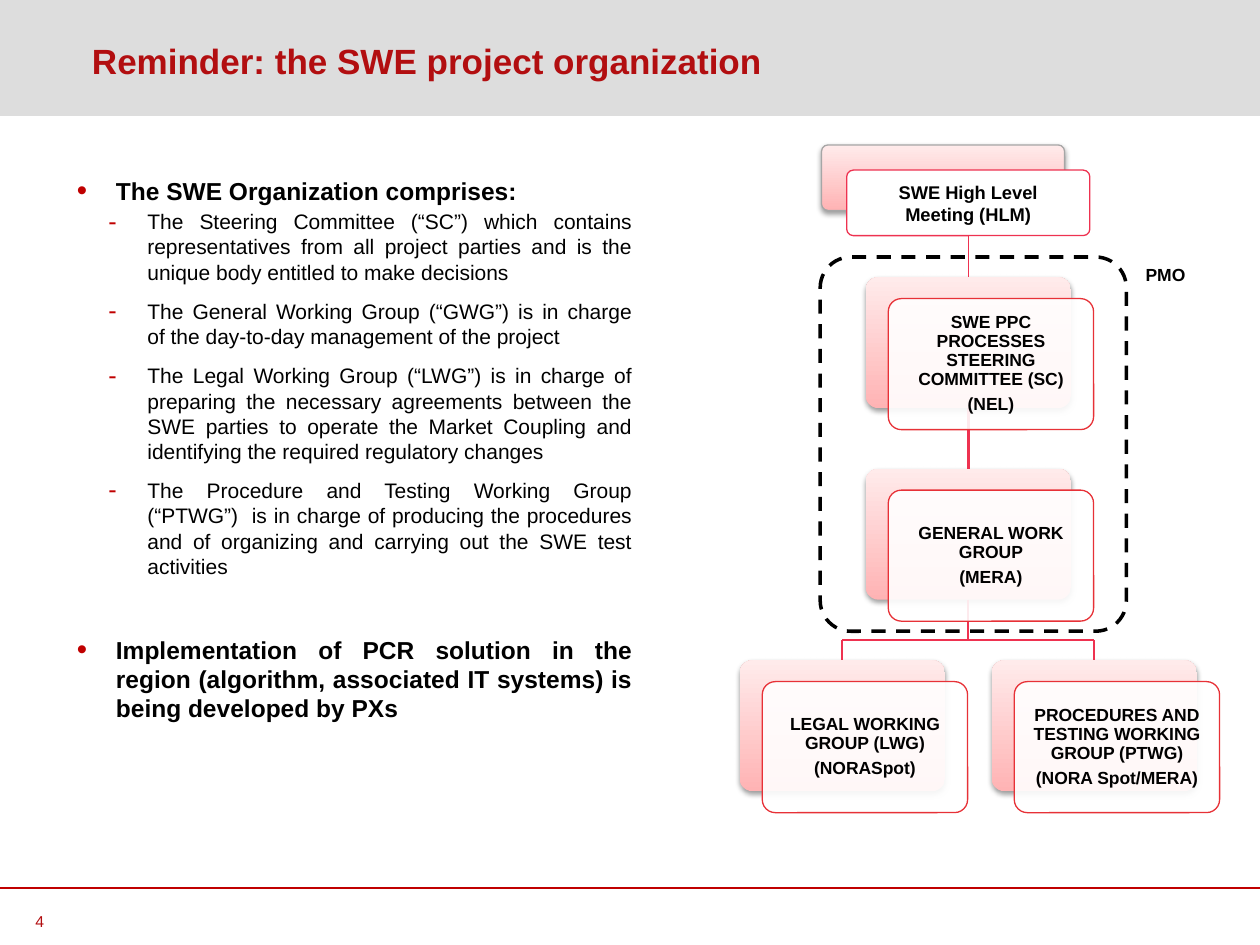
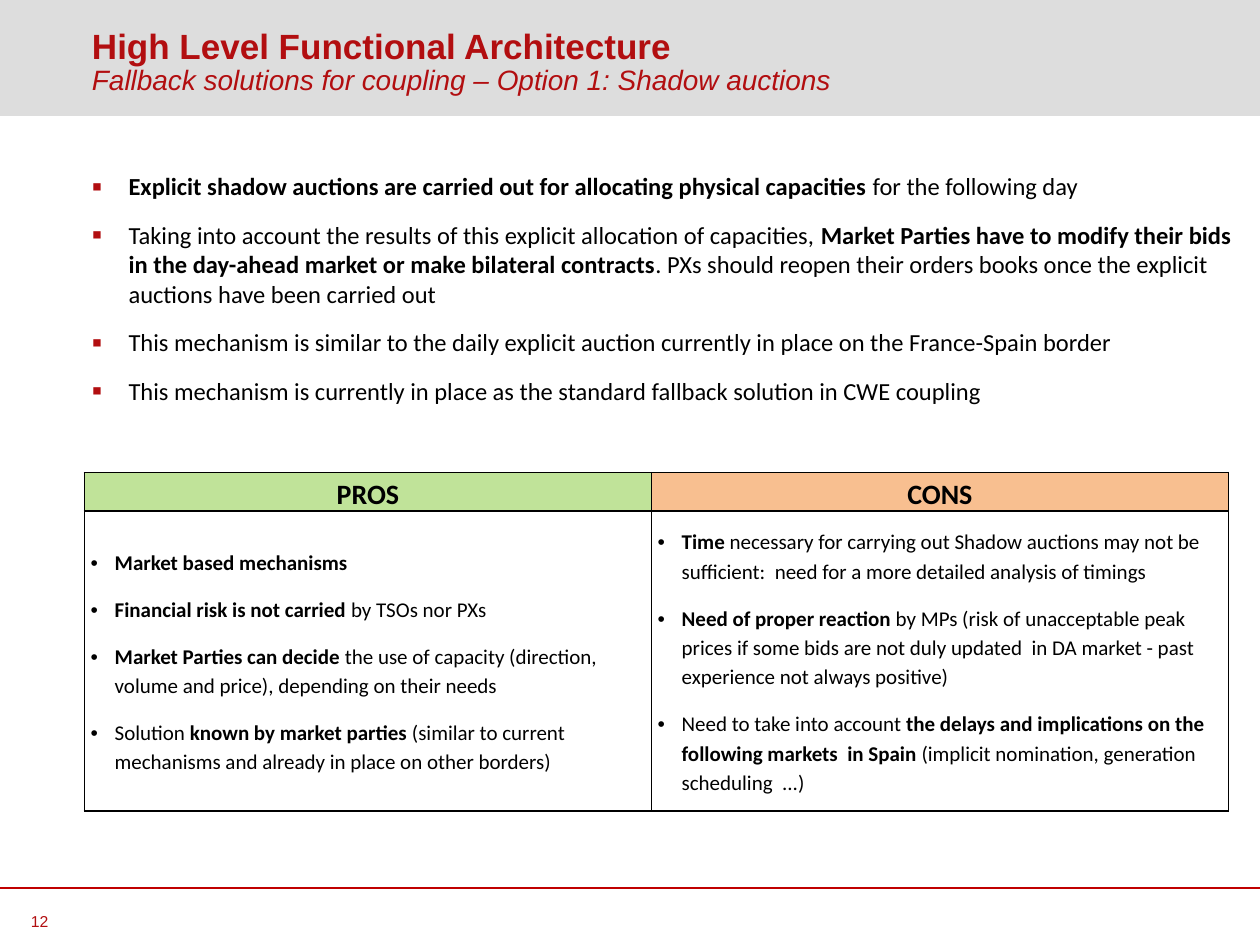
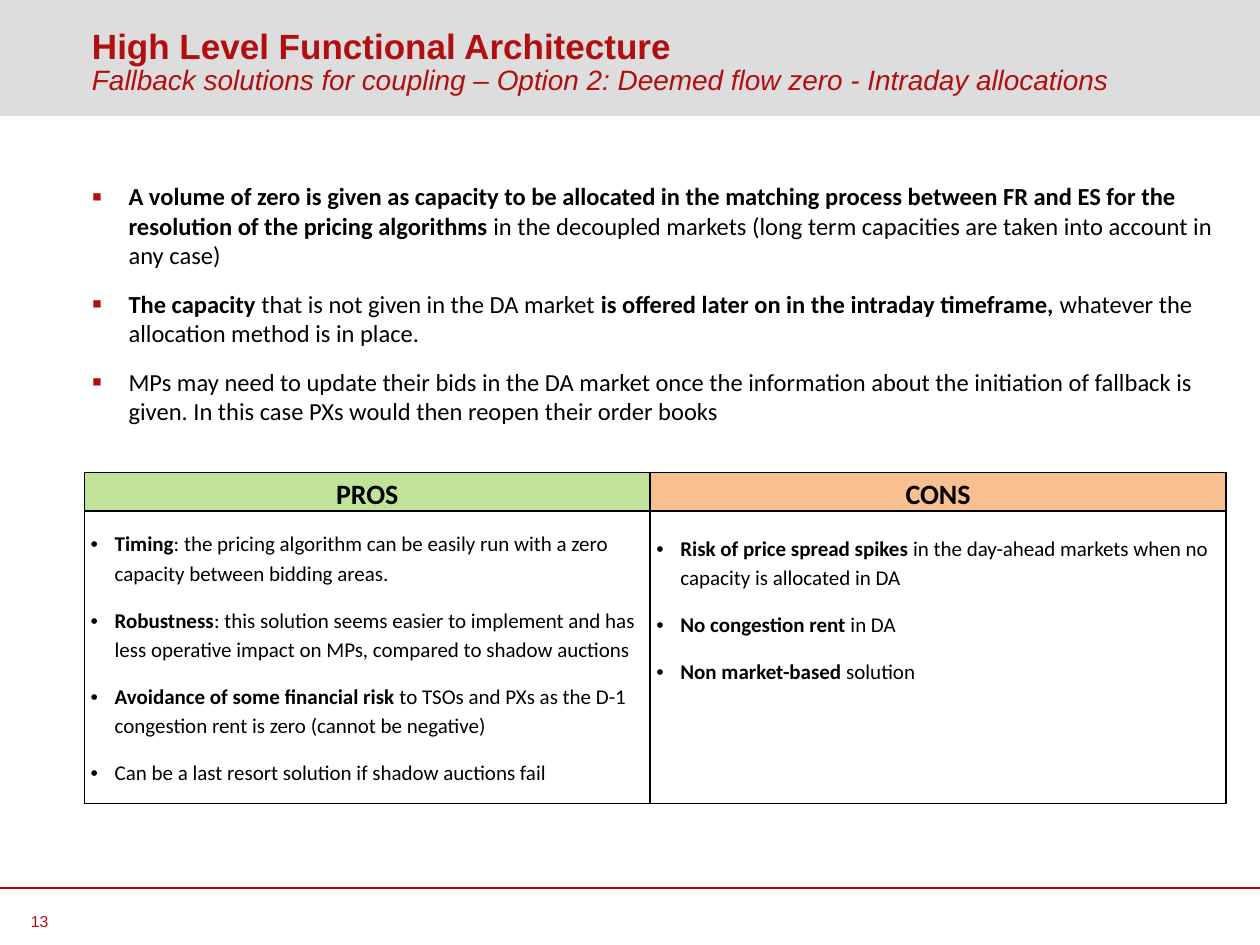
from lxml.etree import SubElement
from pptx import Presentation
from pptx.dml.color import RGBColor
from pptx.enum.dml import MSO_LINE
from pptx.enum.shapes import MSO_CONNECTOR, MSO_SHAPE
from pptx.enum.text import MSO_ANCHOR, MSO_AUTO_SIZE, PP_ALIGN
from pptx.oxml.ns import qn
from pptx.util import Inches, Pt

COLORS = {
    "text": "000000", "white": "FFFFFF", "band": "DDDDDD", "title": "B20E10",
    "rule": "C00000", "link": "EE3250", "card": "E73137", "grey": "A6A6A6",
    "pink": "FFB3B4", "blush": "FFEBEB", "pros": "C0E399", "cons": "F8BF90",
}
RGB = {name: RGBColor.from_string(value) for name, value in COLORS.items()}


def write(frame, text, size=12, font="Arial", color="text", bold=False, italic=False,
          align=PP_ALIGN.LEFT, spacing=None, before=0, after=0,
          bullet=None, bullet_color=None, margin=0, hang=0):
    """Add one paragraph to the frame; **marks** switch to bold."""
    para = frame.add_paragraph() if frame.text else frame.paragraphs[0]
    para.alignment = align
    para.line_spacing = spacing
    para.space_before = Pt(before if para is not frame.paragraphs[0] and frame.text else 0)
    para.space_after = Pt(after)
    if bullet:
        props = para._p.get_or_add_pPr()
        props.set("marL", str(Inches(margin)))
        props.set("indent", str(-Inches(hang)))
        if bullet_color:
            SubElement(SubElement(props, qn("a:buClr")), qn("a:srgbClr"),
                       val=COLORS[bullet_color])
            SubElement(props, qn("a:buSzPct"), val="120000")
        SubElement(props, qn("a:buFont"), typeface="Arial")
        SubElement(props, qn("a:buChar"), char=bullet)
    for index, part in enumerate(text.split("**")):
        if part:
            span = para.add_run()
            span.text = part
            span.font.name, span.font.size = font, Pt(size)
            span.font.bold, span.font.italic = bold or index % 2 == 1, italic
            span.font.color.rgb = RGB[color]


def place(page, left, top, width, height, shape=None, line=None, weight=0.75,
          inset_x=0, inset_y=0, anchor=MSO_ANCHOR.TOP):
    """Add a preset shape, or a text box if no shape is named."""
    area = [Inches(length) for length in (left, top, width, height)]
    if shape is None:
        box = page.shapes.add_textbox(*area)
    else:
        box = page.shapes.add_shape(shape, *area)
        box.shadow.inherit = False
        box.fill.background()
        if shape == MSO_SHAPE.ROUNDED_RECTANGLE:
            box.adjustments[0] = 0.1
        if line:
            box.line.color.rgb = RGB[line]
            box.line.width = Pt(weight)
        else:
            box.line.fill.background()
    frame = box.text_frame
    frame.word_wrap = True
    frame.vertical_anchor = anchor
    frame.margin_left = frame.margin_right = Inches(inset_x)
    frame.margin_top = frame.margin_bottom = Inches(inset_y)
    return box


deck = Presentation()
deck.slide_width, deck.slide_height = Inches(10), Inches(7.5)

# Title, band, rule and number of every slide
pages = []
for number, heading, subtitle in [
    (4, "Reminder: the SWE project organization", None),
    (12, "High Level Functional Architecture",
     "Fallback solutions for coupling – Option 1: Shadow auctions"),
    (13, "High Level Functional Architecture",
     "Fallback solutions for coupling – Option 2: Deemed flow zero - Intraday allocations"),
]:
    page = deck.slides.add_slide(deck.slide_layouts[5])
    pages.append(page)
    band = place(page, 0, 0, 10, 0.92, MSO_SHAPE.RECTANGLE)
    band.fill.solid()
    band.fill.fore_color.rgb = RGB["band"]
    page.shapes.element.insert(2, band.element)

    title = page.shapes.title
    title.left, title.top, title.width, title.height = (
        Inches(length) for length in (0.73, 0.04, 9.08, 0.92))
    frame = title.text_frame
    frame.auto_size = MSO_AUTO_SIZE.NONE
    frame.word_wrap = True
    frame.vertical_anchor = MSO_ANCHOR.MIDDLE
    frame.margin_left = frame.margin_right = frame.margin_top = frame.margin_bottom = 0
    write(frame, heading, size=20, color="title", bold=True, spacing=0.9)
    if subtitle:
        write(frame, subtitle, size=16, color="title", italic=True, spacing=0.9)

    rule = page.shapes.add_connector(
        MSO_CONNECTOR.STRAIGHT, 0, Inches(7.05), deck.slide_width, Inches(7.05))
    rule.line.color.rgb = RGB["rule"]
    rule.line.width = Pt(1)
    SubElement(rule.element.spPr, qn("a:effectLst"))
    label = place(page, 0.13, 7.21, 0.37, 0.2, anchor=MSO_ANCHOR.MIDDLE)
    write(label.text_frame, str(number), size=9, color="title", align=PP_ALIGN.CENTER)

# Project organization: text
page = pages[0]
frame = place(page, 0.51, 1.23, 4.51, 5.75, inset_y=0.05).text_frame
topic = dict(size=14, bold=True, align=PP_ALIGN.JUSTIFY, bullet="•",
             bullet_color="rule", margin=0.41, hang=0.31)
detail = dict(size=12, align=PP_ALIGN.JUSTIFY, bullet="-", before=2, after=6,
              bullet_color="rule", margin=0.66, hang=0.31)
write(frame, "The SWE Organization comprises:", spacing=1.5, **topic)
for text in [
    "The Steering Committee (“SC”) which contains representatives from all project parties "
    "and is the unique body entitled to make decisions",
    "The General Working Group (“GWG”) is in charge of the day-to-day management of the project",
    "The Legal Working Group (“LWG”) is in charge of preparing the necessary agreements between "
    "the SWE parties to operate the Market Coupling and identifying the required regulatory "
    "changes",
    "The Procedure and Testing Working Group (“PTWG”)  is in charge of producing the procedures "
    "and of organizing and carrying out the SWE test activities",
]:
    write(frame, text, **detail)
write(frame, "Implementation of PCR solution in the region (algorithm, associated IT systems) "
      "is being developed by PXs", before=26, **topic)

# Project organization: chart of groups
ROUNDED = MSO_SHAPE.ROUNDED_RECTANGLE
pmo = place(page, 6.51, 2.04, 2.43, 2.97, ROUNDED, line="text", weight=2)
pmo.line.dash_style = MSO_LINE.DASH
label = place(page, 8.78, 1.95, 0.94, 0.48, inset_x=0.03, inset_y=0.03,
              anchor=MSO_ANCHOR.MIDDLE)
write(label.text_frame, "PMO", size=10, bold=True, align=PP_ALIGN.CENTER, spacing=0.9)

CARD_WIDTH, CARD_HEIGHT = 1.63, 1.04
COLUMN, ROW = 1, 1.52
LEFT, TOP = 6.87, 2.2
AXIS = LEFT + CARD_WIDTH / 2
groups = {  # name: column, row, lines
    "steering": (0, 0, ["SWE PPC PROCESSES STEERING COMMITTEE (SC)", "(NEL)"]),
    "general": (0, 1, ["GENERAL WORK GROUP", "(MERA)"]),
    "legal": (-1, 2, ["LEGAL WORKING GROUP (LWG)", "(NORASpot)"]),
    "testing": (1, 2, ["PROCEDURES AND TESTING WORKING GROUP (PTWG)", "(NORA Spot/MERA)"]),
}
backs = {name: place(page, LEFT + column * COLUMN, TOP + row * ROW, CARD_WIDTH, CARD_HEIGHT,
                     ROUNDED)
         for name, (column, row, lines) in groups.items()}
backs["meeting"] = place(page, 6.52, 1.15, 1.93, 0.52, ROUNDED, line="grey")
for back in backs.values():
    back.fill.gradient()
    back.fill.gradient_angle = 90
    for stop, color in zip(back.fill.gradient_stops, ("pink", "blush")):
        stop.color.rgb = RGB[color]
    shadow = SubElement(back.element.spPr.find(qn("a:effectLst")), qn("a:outerShdw"),
                        blurRad=str(Pt(3.1)), dist=str(Pt(1.6)), dir="5400000",
                        rotWithShape="0")
    black = SubElement(shadow, qn("a:srgbClr"), val=COLORS["text"])
    SubElement(black, qn("a:alpha"), val="38000")

meeting = place(page, 6.72, 1.35, 1.93, 0.52, ROUNDED, line="link", inset_x=0.15,
                anchor=MSO_ANCHOR.MIDDLE)
meeting.fill.solid()
meeting.fill.fore_color.rgb = RGB["white"]
write(meeting.text_frame, "SWE High Level Meeting (HLM)", size=10.5, bold=True,
      align=PP_ALIGN.CENTER)

FORK = 5.08
row_tops = [TOP + row * ROW for row in range(3)]
for start, end, weight, upper, lower in [
    ((AXIS, 1.87), (AXIS, row_tops[0]), 0.75, meeting, backs["steering"]),
    ((AXIS, row_tops[0] + CARD_HEIGHT), (AXIS, row_tops[1]), 2,
     backs["steering"], backs["general"]),
    ((AXIS, row_tops[1] + CARD_HEIGHT), (AXIS, FORK), 1, backs["general"], None),
    ((AXIS - COLUMN, FORK), (AXIS + COLUMN, FORK), 1, None, None),
    ((AXIS - COLUMN, FORK), (AXIS - COLUMN, row_tops[2]), 1, None, backs["legal"]),
    ((AXIS + COLUMN, FORK), (AXIS + COLUMN, row_tops[2]), 1, None, backs["testing"]),
]:
    link = page.shapes.add_connector(
        MSO_CONNECTOR.STRAIGHT, *(Inches(length) for length in start + end))
    if upper:
        link.begin_connect(upper, 2)
    if lower:
        link.end_connect(lower, 0)
    link.line.color.rgb = RGB["link"]
    link.line.width = Pt(weight)
    SubElement(link.element.spPr, qn("a:effectLst"))

for column, row, lines in groups.values():
    front = place(page, LEFT + column * COLUMN + 0.18, TOP + row * ROW + 0.17,
                  CARD_WIDTH, CARD_HEIGHT, ROUNDED, line="card",
                  inset_x=0.03, inset_y=0.04, anchor=MSO_ANCHOR.MIDDLE)
    front.fill.solid()
    front.fill.fore_color.rgb = RGB["white"]
    SubElement(front.element.spPr.find(qn("a:solidFill"))[0], qn("a:alpha"), val="90000")
    for text in lines:
        write(front.text_frame, text, size=10, bold=True, align=PP_ALIGN.CENTER,
              spacing=0.9, after=3.5)

# Fallback options: points above a table of pros and cons
options = [
    dict(page=pages[1], top=1.31, columns=(4.5, 4.58), rows=(0.3, 2.38), points=[
        "**Explicit shadow auctions are carried out for allocating physical capacities **"
        "for the following day",
        "Taking into account the results of this explicit allocation of capacities, **Market "
        "Parties have to modify their bids in the day-ahead market or make bilateral "
        "contracts**. PXs should reopen their orders books once the explicit auctions have "
        "been carried out",
        "This mechanism is similar to the daily explicit auction currently in place on the "
        "France-Spain border",
        "This mechanism is currently in place as the standard fallback solution in CWE coupling",
    ], pros=[
        "**Market based mechanisms**",
        "**Financial risk is not carried **by TSOs nor PXs",
        "**Market Parties can decide **the use of capacity (direction, volume and price), "
        "depending on their needs",
        "Solution **known by market parties **(similar to current mechanisms and already in "
        "place on other borders)",
    ], cons=[
        "**Time** necessary for carrying out Shadow auctions may not be sufficient:  need for a "
        "more detailed analysis of timings",
        "**Need of proper reaction **by MPs (risk of unacceptable peak prices if some bids are "
        "not duly updated  in DA market - past experience not always positive)",
        "Need to take into account **the delays and implications on the following markets  in "
        "Spain** (implicit nomination, generation scheduling  ...)",
    ], cons_anchor=MSO_ANCHOR.MIDDLE, cons_inset=0),
    dict(page=pages[2], top=1.39, columns=(4.49, 4.57), rows=(0.3, 2.32), points=[
        "**A volume of zero is given as capacity to be allocated in the matching process between "
        "FR and ES for the resolution of the pricing algorithms **in the decoupled markets "
        "(long term capacities are taken into account in any case)",
        "**The capacity** that is not given in the DA market **is offered later on in the "
        "intraday timeframe, **whatever the allocation method is in place.",
        "MPs may need to update their bids in the DA market once the information about the "
        "initiation of fallback is given. In this case PXs would then reopen their order books",
    ], pros=[
        "**Timing**: the pricing algorithm can be easily run with a zero capacity between "
        "bidding areas.",
        "**Robustness**: this solution seems easier to implement and has less operative impact "
        "on MPs, compared to shadow auctions",
        "**Avoidance of some financial risk** to TSOs and PXs as the D-1 congestion rent is zero "
        "(cannot be negative)",
        "Can be a last resort solution if shadow auctions fail",
    ], cons=[
        "**Risk of price spread spikes **in the day-ahead markets when no capacity is allocated "
        "in DA",
        "**No congestion rent **in DA",
        "**Non market-based **solution",
    ], cons_anchor=MSO_ANCHOR.TOP, cons_inset=0.17),
]
for option in options:
    page = option["page"]
    frame = place(page, 0.73, option["top"], 9.08, 2.28, inset_y=0.05).text_frame
    for text in option["points"]:
        write(frame, text, size=14, font="Calibri", before=5, after=6, bullet="▪",
              bullet_color="title", margin=0.29, hang=0.29)

    table = page.shapes.add_table(
        2, 2, Inches(0.67), Inches(3.75), Inches(sum(option["columns"])),
        Inches(sum(option["rows"]))).table
    table.horz_banding = False
    for row, height in zip(table.rows, option["rows"]):
        row.height = Inches(height)
    for index, side in enumerate(("pros", "cons")):
        table.columns[index].width = Inches(option["columns"][index])
        head, body = table.cell(0, index), table.cell(1, index)
        for cell, fill in ((head, side), (body, "white")):
            cell.margin_left = cell.margin_right = Inches(0.05)
            cell.margin_top = cell.margin_bottom = 0
            props = cell._tc.get_or_add_tcPr()
            for edge in ("a:lnL", "a:lnR", "a:lnT", "a:lnB"):
                border = SubElement(props, qn(edge), w=str(Pt(1)))
                SubElement(SubElement(border, qn("a:solidFill")), qn("a:srgbClr"),
                           val=COLORS["text"])
            cell.fill.solid()
            cell.fill.fore_color.rgb = RGB[fill]
        write(head.text_frame, side.upper(), size=16, font="Calibri", bold=True,
              align=PP_ALIGN.CENTER, spacing=1.15, after=10)
        body.vertical_anchor = MSO_ANCHOR.MIDDLE
        if side == "cons":
            body.vertical_anchor = option["cons_anchor"]
            body.margin_top = Inches(option["cons_inset"])
        for text in option[side]:
            write(body.text_frame, text, size=12, font="Calibri", spacing=1.15, after=10,
                  bullet="•", margin=0.19, hang=0.19)

deck.save("out.pptx")
